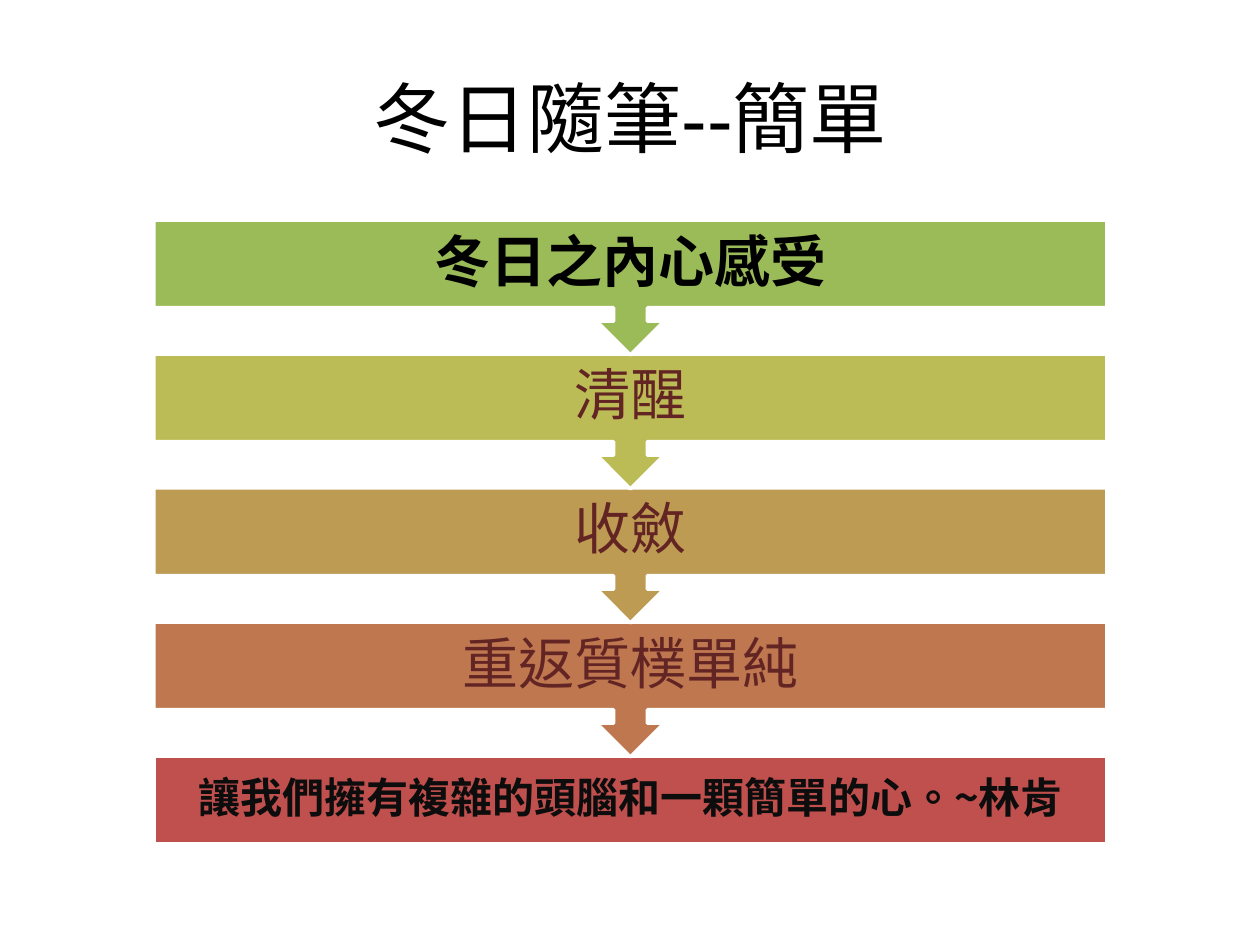
import pptx
import pptx.dml.color
import pptx.enum.shapes
import pptx.enum.text
import pptx.oxml
import pptx.oxml.ns
import pptx.util

SHAPE = pptx.enum.shapes.MSO_SHAPE
EMU_PER_PX = 914400 / 126
CJK_FONT = "Noto Sans CJK SC"
COLORS = {
    "black": "000000", "ink": "0D0D0D", "maroon": "632523", "white": "FFFFFF",
    "green": "9BBB59", "olive": "BCBC56", "ochre": "BD9B53",
    "copper": "BF7750", "red": "C0504D",
}
# text, fill, text colour, size, bold, side inset
STEPS = [
    ("冬日之內心感受", "green", "black", 32, True, 32),
    ("清醒", "olive", "maroon", 32, False, 32),
    ("收斂", "ochre", "maroon", 32, False, 32),
    ("重返質樸單純", "copper", "maroon", 32, False, 32),
    ("讓我們擁有複雜的頭腦和一顆簡單的心。~林肯", "red", "ink", 24, True, 24),
]
FLOW_LEFT, FLOW_TOP, FLOW_WIDTH = 154, 220, 953
STEP_PITCH, CALLOUT_HEIGHT, BAR_HEIGHT = 134, 135, 88


def px(length):
    return pptx.util.Emu(round(length * EMU_PER_PX))


def rgb(name):
    return pptx.dml.color.RGBColor.from_string(COLORS[name])


def write_text(frame, text, size, color, font=CJK_FONT, bold=False, inset=12):
    """Write one centred line of Traditional Chinese."""
    frame.word_wrap = True
    frame.vertical_anchor = pptx.enum.text.MSO_ANCHOR.MIDDLE
    frame.margin_left = frame.margin_right = px(inset)
    frame.margin_top = frame.margin_bottom = 0
    paragraph = frame.paragraphs[0]
    paragraph.alignment = pptx.enum.text.PP_ALIGN.CENTER
    run = paragraph.add_run()
    run.text = text
    paragraph.font.name = font
    paragraph.font.size = pptx.util.Pt(size)
    paragraph.font.bold = bold
    paragraph.font.color.rgb = rgb(color)
    properties = run._r.get_or_add_rPr()
    properties.set("lang", "zh-TW")
    east_asian = pptx.oxml.parse_xml(
        f'<a:ea {pptx.oxml.ns.nsdecls("a")} typeface="{CJK_FONT}"/>')
    properties.append(east_asian)
    return paragraph


def add_title(slide, text):
    title = slide.shapes.add_textbox(px(63), px(38), px(1134), px(157))
    write_text(title.text_frame, text, 44, "black", font="Arial")


def add_step(slide, preset, top, height, step):
    text, fill, color, size, bold, inset = step
    box = slide.shapes.add_shape(
        preset, px(FLOW_LEFT), px(top), px(FLOW_WIDTH), px(height))
    box.shadow.inherit = False
    box.fill.solid()
    box.fill.fore_color.rgb = rgb(fill)
    box.line.color.rgb = rgb("white")
    box.line.width = pptx.util.Pt(2)
    paragraph = write_text(box.text_frame, text, size, color, bold=bold, inset=inset)
    paragraph.line_spacing = 0.9


def add_flow(slide, steps):
    """Stack the steps from the bottom up, so each arrow lies over the next bar."""
    last = len(steps) - 1
    for index in range(last, -1, -1):
        preset, height = (
            (SHAPE.RECTANGLE, BAR_HEIGHT) if index == last
            else (SHAPE.DOWN_ARROW_CALLOUT, CALLOUT_HEIGHT))
        add_step(slide, preset, FLOW_TOP + index * STEP_PITCH, height, steps[index])


def main():
    deck = pptx.Presentation()
    deck.slide_width, deck.slide_height = px(1260), px(945)
    slide = deck.slides.add_slide(deck.slide_layouts[6])
    add_title(slide, "冬日隨筆--簡單")
    add_flow(slide, STEPS)
    deck.save("out.pptx")


if __name__ == "__main__":
    main()
